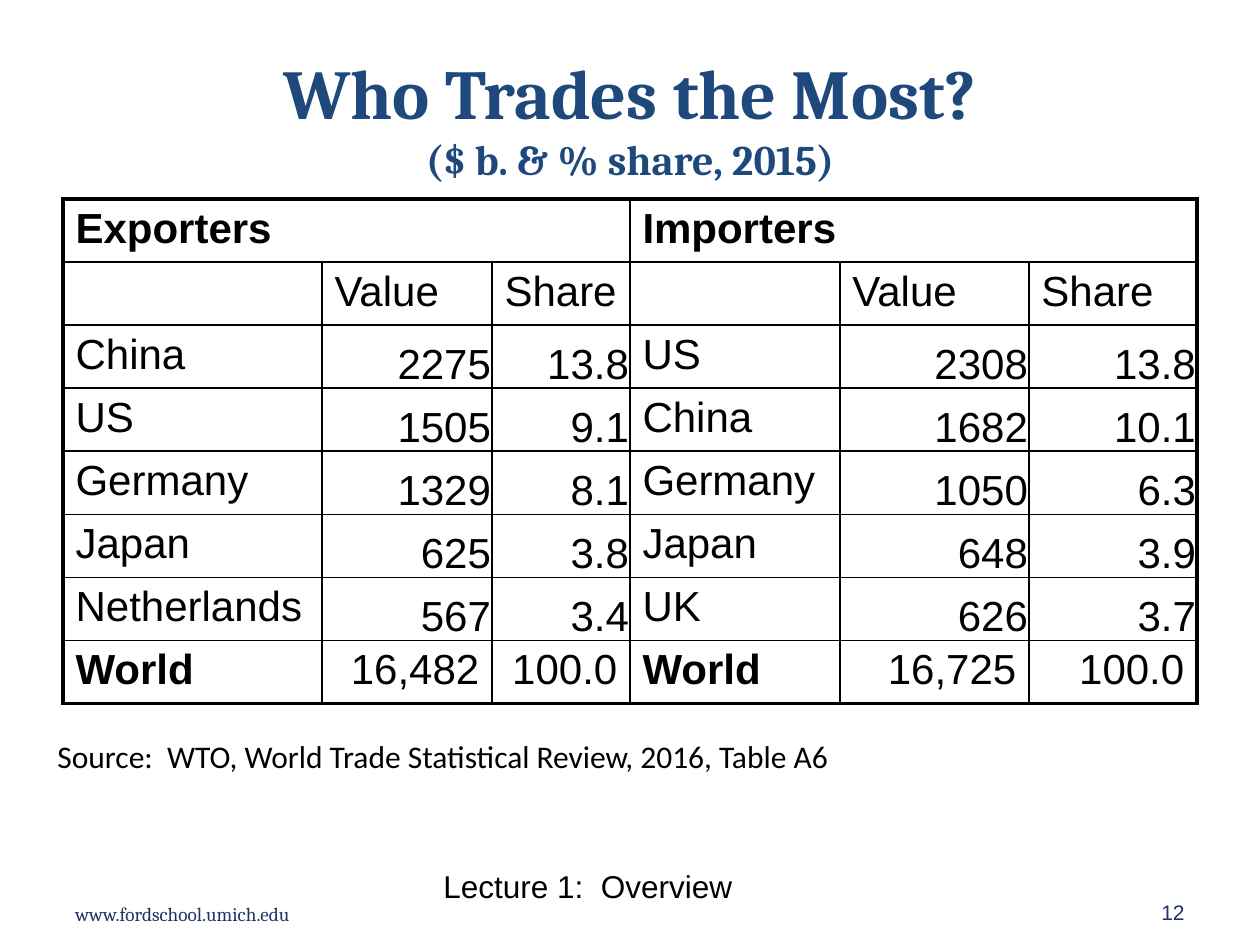
from pptx import Presentation
from pptx.dml.color import RGBColor as Color
from pptx.enum.text import MSO_ANCHOR as Anchor, PP_ALIGN as Align
from pptx.oxml.ns import qn
from pptx.util import Pt
from lxml.etree import SubElement, Element
from dataclasses import dataclass

SCALE = 914400 / 126  # EMU in one px


@dataclass(frozen=True)
class Theme:
    black: str = "000000"
    white: str = "FFFFFF"
    title_blue: str = "1F497D"
    footer_blue: str = "233368"
    serif: str = "Cambria"
    sans: str = "Arial"
    note: str = "Calibri"
    title_size: int = 40
    table_size: int = 24
    body_size: int = 18
    number_size: int = 12
    link_size: int = 11
    thin: float = 1
    thick: float = 2.25


THEME = Theme()

EXPORTERS = [("China", "2275", "13.8"), ("US", "1505", "9.1"),
             ("Germany", "1329", "8.1"), ("Japan", "625", "3.8"),
             ("Netherlands", "567", "3.4"), ("World", "16,482", "100.0")]
IMPORTERS = [("US", "2308", "13.8"), ("China", "1682", "10.1"),
             ("Germany", "1050", "6.3"), ("Japan", "648", "3.9"),
             ("UK", "626", "3.7"), ("World", "16,725", "100.0")]


def px(length):
    return round(length * SCALE)


def set_all(target, values):
    for name, value in values.items():
        setattr(target, name, value)


def add_span(para, text, name, size, color, bold=False):
    span = para.add_run()
    span.text = text
    set_all(span.font, {"name": name, "size": Pt(size), "bold": bold})
    span.font.color.rgb = Color.from_string(color)


def add_box(page, box, anchor=Anchor.TOP, align=Align.LEFT, **margins):
    """Add an empty wrapped text box and return its first paragraph."""
    frame = page.shapes.add_textbox(*map(px, box)).text_frame
    set_all(frame, {"word_wrap": True, "vertical_anchor": anchor, **margins})
    para = frame.paragraphs[0]
    para.alignment = align
    return para


def add_title(page, box):
    para = add_box(page, box, Anchor.MIDDLE, Align.CENTER)
    look = {"name": THEME.serif, "color": THEME.title_blue, "bold": True}
    add_span(para, "Who Trades the Most?", size=THEME.title_size, **look)
    para.add_line_break()
    add_span(para, "($ b. & % share, 2015)", size=THEME.table_size, **look)


def set_borders(cell, widths):
    props = cell._tc.get_or_add_tcPr()
    for position, (side, width) in enumerate(widths.items()):
        line = Element(qn(f"a:ln{side}"), w=str(Pt(width)))
        fill = SubElement(line, qn("a:solidFill"))
        SubElement(fill, qn("a:srgbClr"), val=THEME.black)
        props.insert(position, line)


def fill_cell(cell, text, bold, number, snug):
    cell.fill.solid()
    cell.fill.fore_color.rgb = Color.from_string(THEME.white)
    if snug:
        set_all(cell, {"vertical_anchor": Anchor.BOTTOM, "margin_left": px(1),
                       "margin_right": px(1), "margin_top": px(1),
                       "margin_bottom": 0})
    para = cell.text_frame.paragraphs[0]
    para.alignment = Align.RIGHT if number else Align.LEFT
    if text:
        add_span(para, text, THEME.sans, THEME.table_size, THEME.black, bold)


def add_trade_table(page, box, columns):
    heads = [("Exporters", "", "", "Importers", "", ""),
             ("", "Value", "Share") * 2]
    rows = heads + [left + right for left, right in zip(EXPORTERS, IMPORTERS)]
    last_row, last_column = len(rows) - 1, len(columns) - 1
    table = page.shapes.add_table(len(rows), len(columns), *map(px, box)).table
    set_all(table, {"first_row": False, "horz_banding": False})
    for column, width in zip(table.columns, columns):
        column.width = px(width)
    for row in table.rows:
        row.height = px(box[3] / len(rows))

    for r, row in enumerate(rows):
        for c, text in enumerate(row):
            cell = table.cell(r, c)
            number = r >= len(heads) and c % 3 > 0
            fill_cell(cell, text, bold=r == 0 or (r == last_row and not number),
                      number=number, snug=number and r < last_row)
            # The right-hand heading reaches the outer edge once merged
            right_edge = c == last_column or (r == 0 and c == 3)
            outer = {"L": c == 0, "R": right_edge,
                     "T": r == 0, "B": r == last_row}
            set_borders(cell, {side: THEME.thick if edge else THEME.thin
                               for side, edge in outer.items()})
    # Each heading spans its half of the table
    for c in (0, 3):
        table.cell(0, c).merge(table.cell(0, c + 2))


def add_source(page, box):
    para = add_box(page, box, margin_top=0, margin_bottom=0)
    add_span(para, "Source:  WTO, World Trade Statistical Review, 2016, Table A6",
             THEME.note, THEME.body_size, THEME.black)


def add_footer(page, box):
    left, top, width, height = box
    # Web address
    para = add_box(page, (left, top + 34, 343, 37), Anchor.BOTTOM)
    add_span(para, "www.fordschool.umich.edu", THEME.serif, THEME.link_size,
             THEME.footer_blue)
    # Lecture name
    para = add_box(page, (left + 368, top, 399, height))
    add_span(para, "Lecture 1:  Overview", THEME.sans, THEME.body_size,
             THEME.black)
    # Page number
    para = add_box(page, (left + width - 294, top + 20, 294, 50),
                   Anchor.BOTTOM, Align.RIGHT)
    add_span(para, "12", THEME.sans, THEME.number_size, THEME.footer_blue)


def main():
    deck = Presentation()
    set_all(deck, {"slide_width": px(1260), "slide_height": px(945)})
    page = deck.slides.add_slide(deck.slide_layouts[6])
    add_footer(page, (63, 861, 1134, 66))
    add_title(page, (63, 38, 1134, 158))
    add_trade_table(page, (63, 199, 1134, 472), (259, 170, 138, 210, 189, 168))
    add_source(page, (45, 737, 1029, 38))
    deck.save("out.pptx")


if __name__ == "__main__":
    main()
